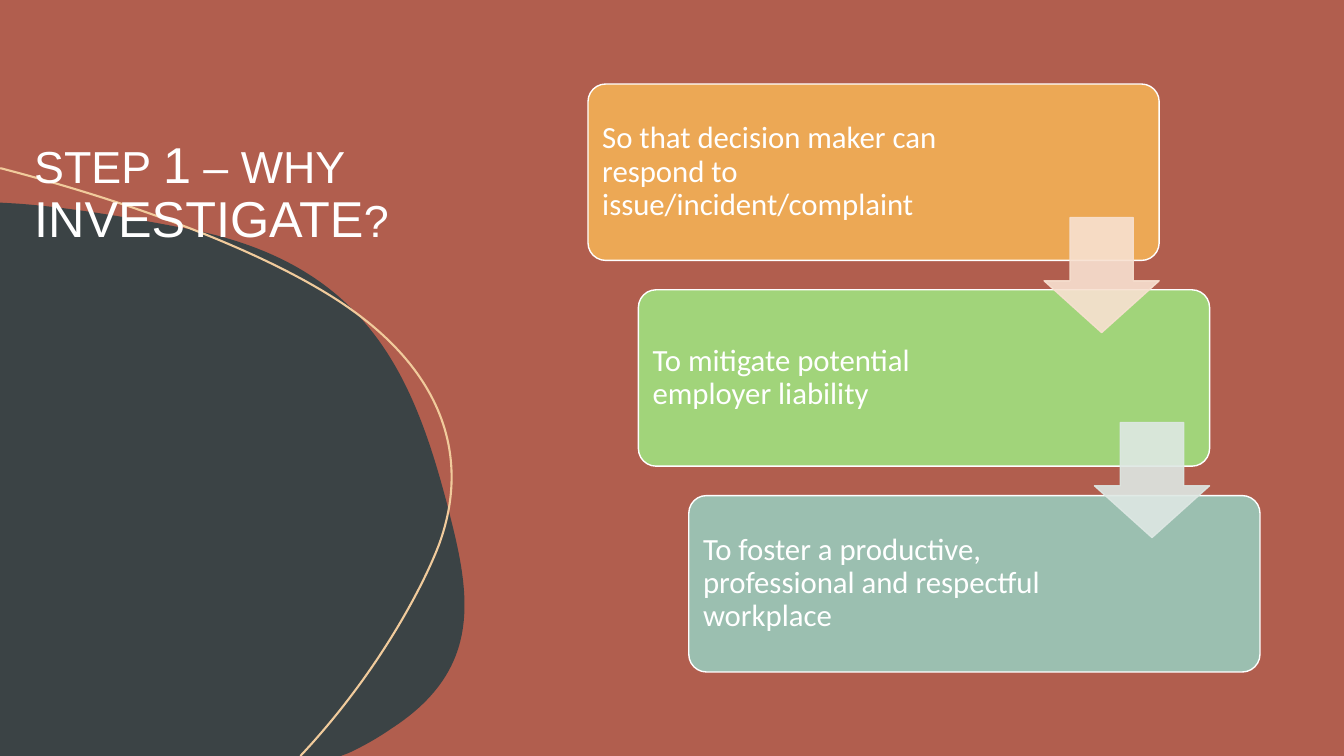
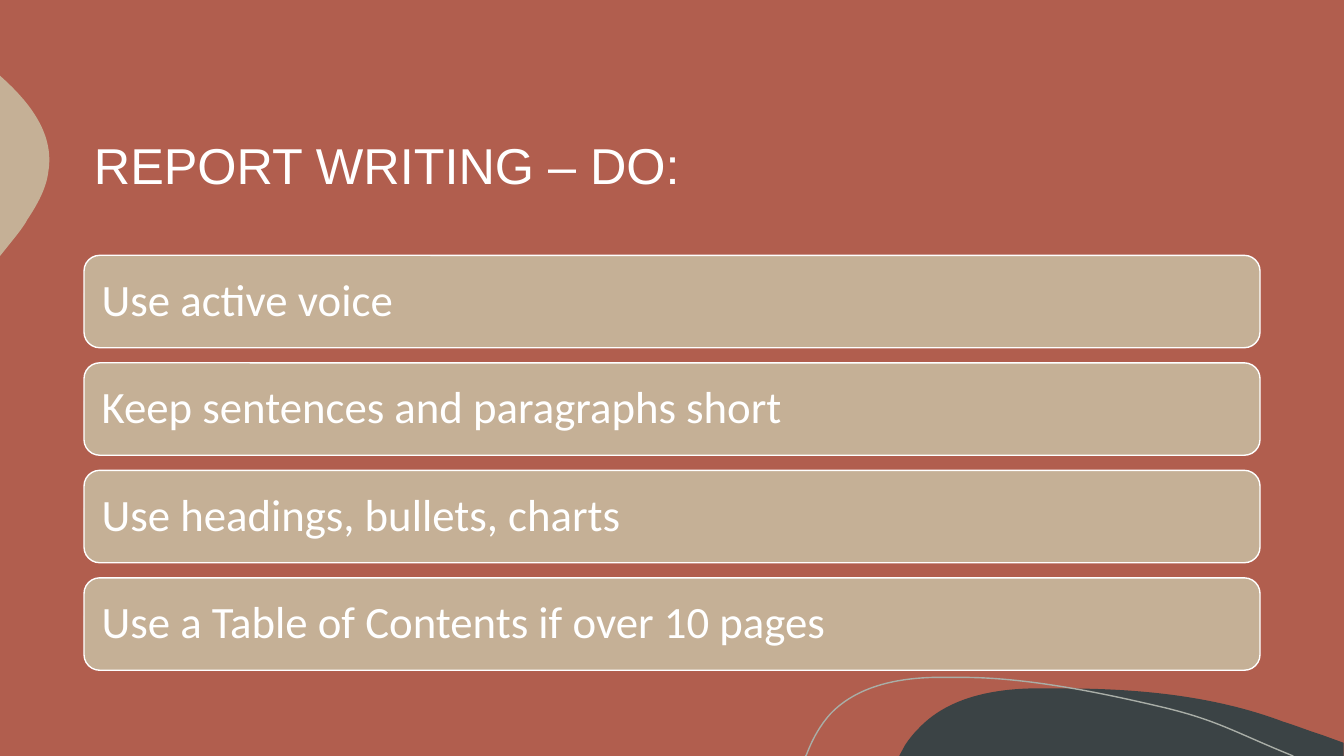
from dataclasses import dataclass

from lxml.etree import SubElement
from pptx import Presentation
from pptx.dml.color import RGBColor
from pptx.enum.shapes import MSO_SHAPE
from pptx.enum.text import MSO_ANCHOR, PP_ALIGN
from pptx.oxml.ns import qn
from pptx.util import Inches, Pt

WIDE, HIGH = 13.333, 7.5
CELL = WIDE / 16  # the slide is a grid of 16 columns by 9 rows
UNITS = 1000  # outline units in an inch

RUST, SLATE, SAND = "B15E4E", "3B4345", "C5B096"
WHITE, CREAM, ASH = "FFFFFF", "F1CB9C", "A9AEA7"
HEAD, BODY = "Arial", "Calibri"


@dataclass(frozen=True)
class Area:
    """Place and size in grid columns and rows."""
    col: float
    row: float
    cols: float
    rows: float

    def shift(self, count: int, right: float, down: float) -> "Area":
        return Area(self.col + count * right, self.row + count * down,
                    self.cols, self.rows)

    def box(self) -> list:
        return [Inches(n * CELL) for n in (self.col, self.row, self.cols, self.rows)]


@dataclass(frozen=True)
class Curve:
    """Outline in inches: a step of two numbers is a line, of six a Bezier."""
    bounds: tuple  # left, top, right, bottom
    start: tuple
    steps: tuple
    fill: str = ""
    line: str = ""
    width: float = 1


@dataclass(frozen=True)
class Stage:
    text: str
    fill: str
    arrow: str = ""


CORNER = Curve((8.92, 6.83, 13.33, 7.5), (10.54, 6.83), (
    (11.28, 6.83, 12.04, 6.9, 12.73, 7.16), (12.86, 7.2, 12.98, 7.25, 13.11, 7.29),
    (13.33, 7.37), (13.33, 7.5), (8.92, 7.5), (8.98, 7.39),
    (9.02, 7.33, 9.06, 7.28, 9.11, 7.23), (9.39, 6.93, 9.82, 6.84, 10.23, 6.83),
    (10.33, 6.83, 10.43, 6.83, 10.54, 6.83)), fill=SLATE)
EDGE = Curve((0, 0.75, 0.49, 2.54), (0, 0.75), (
    (0.01, 0.76), (0.3, 1.02, 0.54, 1.33, 0.48, 1.7),
    (0.46, 1.87, 0.37, 2.03, 0.27, 2.18), (0.24, 2.24, 0.17, 2.33, 0.08, 2.44),
    (0, 2.54)), fill=SAND)
WAVE = Curve((7.99, 6.72, 12.83, 7.5), (7.99, 7.5), (
    (8, 7.49), (8.06, 7.33, 8.14, 7.19, 8.24, 7.08),
    (8.5, 6.81, 8.89, 6.73, 9.26, 6.72), (9.55, 6.72),
    (10.22, 6.72, 11, 6.89, 11.55, 7.02), (12.09, 7.15, 12.26, 7.27, 12.83, 7.5)),
    line=ASH)
BLOB = Curve((0, 2.01, 4.61, 7.5), (0, 2.01), (
    (0.17, 2.02), (0.72, 2.06, 1.29, 2.16, 1.86, 2.27),
    (3.62, 2.61, 4.09, 3.7, 4.43, 4.98), (4.65, 5.83, 4.84, 6.61, 3.88, 7.23),
    (3.75, 7.32, 3.61, 7.4, 3.46, 7.47), (3.38, 7.5), (0, 7.5), (0, 2.01)),
    fill=SLATE)
ARC = Curve((0, 1.67, 4.48, 7.5), (0, 1.67), (
    (0.01, 1.67), (1.39, 2.03, 2.58, 2.49, 3.32, 2.96),
    (4.43, 3.67, 4.66, 4.56, 4.36, 5.39), (4.22, 5.77, 3.77, 6.66, 2.98, 7.5),
    (2.98, 7.5)), line=CREAM, width=1.5)

STAGES = (
    Stage("So that decision maker can respond to issue/incident/complaint",
          "ECA855", "F8E1D1"),
    Stage("To mitigate potential employer liability", "A1D47A", "DEE8E4"),
    Stage("To foster a productive, professional and respectful workplace", "9BBFB0"),
)
RULES = ("Use active voice", "Keep sentences and paragraphs short",
         "Use headings, bullets, charts", "Use a Table of Contents if over 10 pages")


def tint(code: str) -> RGBColor:
    return RGBColor.from_string(code)


def paint(shape, fill: str = "", line: str = "", width: float = 1, alpha: int = 100) -> None:
    """Set fill, line and opacity in percent; an empty colour means none."""
    shape.shadow.inherit = False
    for part, code in ((shape.fill, fill), (shape.line.fill, line)):
        if code:
            part.solid()
            part.fore_color.rgb = tint(code)
        else:
            part.background()
    if line:
        shape.line.width = Pt(width)
    if alpha < 100:
        for node in shape._element.spPr.iter(qn("a:srgbClr")):
            SubElement(node, qn("a:alpha")).set("val", str(alpha * 1000))


def write(shape, *runs: tuple, font: str = BODY, color: str = WHITE,
          anchor: MSO_ANCHOR = MSO_ANCHOR.MIDDLE,
          pads: tuple = (0.1, 0.05, 0.1, 0.05)) -> None:
    """Write (text, size) runs; pads are left, top, right, bottom in inches."""
    frame = shape.text_frame
    frame.word_wrap = True
    frame.vertical_anchor = anchor
    (frame.margin_left, frame.margin_top,
     frame.margin_right, frame.margin_bottom) = map(Inches, pads)
    para = frame.paragraphs[0]
    para.alignment = PP_ALIGN.LEFT
    para.line_spacing = 0.9
    for text, size in runs:
        run = para.add_run()
        run.text = text
        run.font.name = font
        run.font.size = Pt(size)
        run.font.color.rgb = tint(color)


def draw(slide, curve: Curve):
    """Span the bounds with a freeform, then give it the curved outline."""
    left, top, right, base = (round(n * UNITS) for n in curve.bounds)
    pen = slide.shapes.build_freeform(left, top, scale=Inches(1) / UNITS)
    pen.add_line_segments([(right, base)], close=False)
    shape = pen.convert_to_shape()
    route = next(shape._element.iter(qn("a:path")))
    for node in list(route):
        route.remove(node)

    def add(tag: str, step: tuple) -> None:
        node = SubElement(route, qn(tag))
        for x, y in zip(step[::2], step[1::2]):
            point = SubElement(node, qn("a:pt"))
            point.set("x", str(round(x * UNITS) - left))
            point.set("y", str(round(y * UNITS) - top))

    add("a:moveTo", curve.start)
    for step in curve.steps:
        add("a:lnTo" if len(step) == 2 else "a:cubicBezTo", step)
    if curve.fill:
        SubElement(route, qn("a:close"))
    paint(shape, curve.fill, curve.line, curve.width)
    return shape


def card(slide, area: Area, text: str, fill: str, size: float, pads: tuple,
         bend: float) -> None:
    shape = slide.shapes.add_shape(MSO_SHAPE.ROUNDED_RECTANGLE, *area.box())
    shape.adjustments[0] = bend
    paint(shape, fill, WHITE)
    write(shape, (text, size), pads=pads)


def arrow(slide, area: Area, color: str) -> None:
    shape = slide.shapes.add_shape(MSO_SHAPE.DOWN_ARROW, *area.box())
    shape.adjustments[0], shape.adjustments[1] = 0.55, 0.45
    paint(shape, color, color, alpha=90)


def title(slide, area: Area, *runs: tuple,
          anchor: MSO_ANCHOR = MSO_ANCHOR.MIDDLE) -> None:
    write(slide.shapes.add_textbox(*area.box()), *runs, font=HEAD, anchor=anchor)


def theme(slide) -> None:
    """Give the slide's layout the shared ground and curves."""
    layout = slide.slide_layout
    for holder in list(layout.placeholders):
        layout.shapes._spTree.remove(holder._element)
    ground = layout.background.fill
    ground.solid()
    ground.fore_color.rgb = tint(RUST)
    for shape in [draw(slide, curve) for curve in (CORNER, EDGE, WAVE)]:
        layout.shapes._spTree.append(shape._element)


def reasons(slide) -> None:
    cover = slide.shapes.add_shape(MSO_SHAPE.RECTANGLE, *Area(0, 0, 16, 9).box())
    paint(cover, RUST)
    for curve in (BLOB, ARC):
        draw(slide, curve)
    title(slide, Area(0.29, -0.6, 4.48, 3.62), ("STEP ", 32), ("1", 36),
          (" – WHY ", 32), ("INVESTIGATE", 36), ("?", 32), anchor=MSO_ANCHOR.BOTTOM)
    first, link = Area(7, 1, 6.8, 2.1), Area(12.43, 2.59, 1.37, 1.37)
    for i, stage in enumerate(STAGES):
        card(slide, first.shift(i, 0.6, 2.45), stage.text, stage.fill, 22,
             (0.09, 0.09, 1.85, 0.09), 0.1)
    for i, stage in enumerate(STAGES):
        if stage.arrow:
            arrow(slide, link.shift(i, 0.6, 2.44), stage.arrow)


def advice(slide) -> None:
    title(slide, Area(1, 1, 14, 2), ("REPORT WRITING – DO:", 36))
    first = Area(1, 3.04, 14, 1.1)
    for i, rule in enumerate(RULES):
        card(slide, first.shift(i, 0, 1.28), rule, SAND, 32, (0.13,) * 4, 0.17)


def main() -> None:
    deck = Presentation()
    deck.slide_width, deck.slide_height = Inches(WIDE), Inches(HIGH)
    blank = deck.slide_layouts[6]
    why, how = (deck.slides.add_slide(blank) for _ in range(2))
    theme(why)
    reasons(why)
    advice(how)
    deck.save("out.pptx")


if __name__ == "__main__":
    main()
